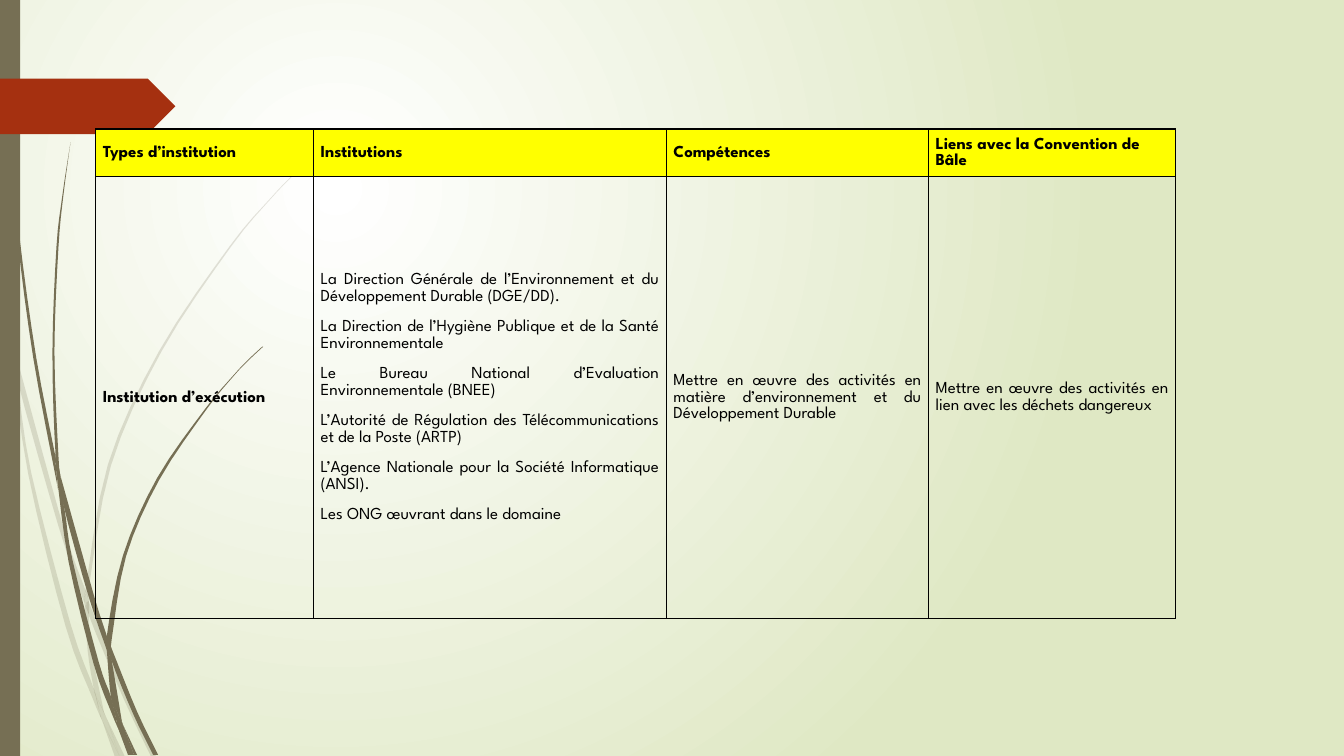
from lxml.etree import SubElement
from pptx import Presentation
from pptx.dml.color import RGBColor
from pptx.enum.shapes import MSO_SHAPE
from pptx.enum.text import MSO_ANCHOR, PP_ALIGN
from pptx.oxml import parse_xml
from pptx.oxml.ns import nsdecls, qn
from pptx.util import Inches, Pt


def color(hex_value):
    return RGBColor.from_string(hex_value)


def smooth_edge(points):
    padded = [points[0], *points, points[-1]]
    curve = [points[0]]
    for a, b, c, d in zip(padded, padded[1:], padded[2:], padded[3:]):
        for t in (0.25, 0.5, 0.75, 1):
            curve.append(tuple(
                q + t * (r - p) / 2
                + t ** 2 * (2 * p - 5 * q + 4 * r - s) / 2
                + t ** 3 * (3 * q - p - 3 * r + s) / 2
                for p, q, r, s in zip(a, b, c, d)))
    return [(Inches(x), Inches(y)) for x, y in curve]


presentation = Presentation()
presentation.slide_width = Inches(13.33)
presentation.slide_height = Inches(7.5)
slide = presentation.slides.add_slide(presentation.slide_layouts[6])

background_fill = slide.background.fill
background_fill.gradient()
for stop, stop_color in zip(background_fill.gradient_stops, ("FFFFFF", "DFE8C4")):
    stop.color.rgb = color(stop_color)
linear = next(slide.element.iter(qn("a:lin")))
linear.getparent().replace(linear, parse_xml(
    f'<a:path {nsdecls("a")} path="circle">'
    '<a:fillToRect l="50000" t="50000" r="100000" b="100000"/></a:path>'))

pale_blades = [
    ([(0.11, 3.5), (0.09, 3.22), (0, 2.82)], [(0, 2.99), (0.1, 3.44), (0.11, 3.5)]),
    ([(0.14, 3.45), (0.17, 3.76), (0.58, 5.22), (0.84, 5.99)],
     [(0.85, 5.86), (0.62, 5.2), (0.14, 3.45)]),
    ([(0.88, 5.96), (0.88, 6.1), (1.23, 6.94), (1.5, 7.51)],
     [(1.55, 7.51), (1.27, 6.92), (0.92, 6.07), (0.88, 5.96)]),
    ([(1.05, 7.11), (1.19, 7.51)], [(1.24, 7.51), (1.05, 7.11)]),
    ([(0.11, 3.5), (0.28, 4.7), (0.65, 6.21), (0.92, 6.93), (1.01, 7.14)],
     [(0.99, 7.07), (0.93, 6.83), (0.7, 6.19), (0.31, 4.69), (0.17, 3.76), (0.11, 3.5)]),
    ([(0.84, 5.99), (0.87, 6.46), (0.93, 6.83), (0.96, 6.92), (1.05, 7.11)],
     [(1.03, 7.06), (0.91, 6.46), (0.88, 6.1), (0.88, 6.08), (0.84, 5.99)]),
    ([(3.12, 1.53), (2.89, 1.75), (2.68, 1.97), (2.28, 2.44), (1.58, 3.48),
      (1.07, 4.61), (0.85, 5.84), (0.85, 5.86), (0.88, 5.96)],
     [(0.88, 5.84), (1.1, 4.62), (1.6, 3.49), (2.29, 2.45), (2.68, 1.98),
      (2.9, 1.75), (3.12, 1.54)]),
    ([(1.01, 7.14), (1.14, 7.51)], [(1.19, 7.51), (1.01, 7.14)]),
    ([(0.85, 5.86), (0.84, 5.99), (0.88, 6.08)], [(0.88, 6.1), (0.88, 5.96), (0.85, 5.86)]),
    ([(0.93, 6.83), (0.99, 7.07), (1.01, 7.14), (1.19, 7.51)],
     [(1.19, 7.51), (1.05, 7.11), (0.96, 6.92), (0.93, 6.83)]),
]
dark_blades = [
    ([(0.03, 0), (0.04, 0.48), (0.07, 1.1), (0.17, 2.33), (0.33, 3.55), (0.56, 4.77),
      (0.57, 4.81)],
     [(0.55, 4.57), (0.55, 4.53), (0.36, 3.55), (0.19, 2.32), (0.08, 1.09),
      (0.05, 0.48), (0.04, 0)]),
    ([(0.6, 4.72), (0.64, 5.05), (0.88, 5.92), (1.06, 6.45)],
     [(1.06, 6.33), (1.06, 6.31), (0.93, 5.9), (0.6, 4.72)]),
    ([(1.1, 6.41), (1.11, 6.56), (1.32, 7.08), (1.52, 7.49)],
     [(1.57, 7.49), (1.36, 7.06), (1.13, 6.49), (1.1, 6.41)]),
    ([(0.57, 4.77), (0.68, 5.57), (0.93, 6.59), (1.11, 7.08), (1.17, 7.22)],
     [(1.16, 7.17), (1.1, 6.91), (0.98, 6.57), (0.72, 5.56), (0.64, 5.05), (0.57, 4.77)]),
    ([(0.7, 1.41), (0.62, 1.93), (0.56, 2.45), (0.52, 3.49), (0.55, 4.49), (0.6, 4.72)],
     [(0.6, 4.72), (0.58, 4.53), (0.54, 3.49), (0.58, 2.45), (0.63, 1.93), (0.7, 1.41)]),
    ([(1.22, 7.19), (1.33, 7.49)], [(1.36, 7.49), (1.22, 7.19)]),
    ([(0.55, 4.49), (0.55, 4.53), (0.57, 4.77), (0.64, 5.05)],
     [(0.64, 5.05), (0.6, 4.72), (0.55, 4.49)]),
    ([(2.6, 3.44), (2.45, 3.58), (2.31, 3.73), (2.04, 4.05), (1.56, 4.74),
      (1.22, 5.51), (1.06, 6.31), (1.1, 6.41)],
     [(1.11, 6.33), (1.25, 5.52), (1.58, 4.76), (2.05, 4.06), (2.31, 3.74),
      (2.45, 3.59), (2.61, 3.44)]),
    ([(1.17, 7.22), (1.27, 7.49)], [(1.31, 7.49), (1.17, 7.22)]),
    ([(1.06, 6.45), (1.1, 6.91), (1.16, 7.06), (1.22, 7.19)],
     [(1.21, 7.16), (1.11, 6.56), (1.09, 6.51), (1.06, 6.45)]),
    ([(1.06, 6.31), (1.06, 6.45), (1.09, 6.51), (1.11, 6.56)],
     [(1.11, 6.56), (1.1, 6.41), (1.06, 6.31)]),
    ([(1.1, 6.91), (1.16, 7.17), (1.17, 7.22), (1.3, 7.49)],
     [(1.33, 7.49), (1.22, 7.19), (1.16, 7.06), (1.1, 6.91)]),
]
for blades, opacity in ((pale_blades, 20), (dark_blades, 100)):
    for left_edge, right_edge in blades:
        outline = smooth_edge(left_edge) + smooth_edge(right_edge)
        builder = slide.shapes.build_freeform(*outline[0], scale=1.0)
        builder.add_line_segments(outline[1:], close=True)
        blade = builder.convert_to_shape()
        blade.shadow.inherit = False
        blade.fill.solid()
        blade.fill.fore_color.rgb = color("766F54")
        blade.line.fill.background()
        if opacity < 100:
            blade_color = next(blade.element.iter(qn("a:srgbClr")))
            SubElement(blade_color, qn("a:alpha")).set("val", str(opacity * 1000))

for kind, top, width, height, fill_color in (
    (MSO_SHAPE.RECTANGLE, 0, 0.2, 7.5, "766F54"),
    (MSO_SHAPE.PENTAGON, 0.78, 1.74, 0.55, "A53010"),
):
    shape = slide.shapes.add_shape(
        kind, 0, Inches(top), Inches(width), Inches(height))
    shape.shadow.inherit = False
    shape.fill.solid()
    shape.fill.fore_color.rgb = color(fill_color)
    shape.line.fill.background()

rows = [
    [["Types d’institution"], ["Institutions"], ["Compétences"],
     ["Liens avec la Convention de Bâle"]],
    [["Institution d’exécution"],
     ["La Direction Générale de l’Environnement et du Développement Durable (DGE/DD).",
      "La Direction de l’Hygiène Publique et de la Santé Environnementale",
      "Le Bureau National d’Evaluation Environnementale (BNEE)",
      "L’Autorité de Régulation des Télécommunications et de la Poste (ARTP)",
      "L’Agence Nationale pour la Société Informatique (ANSI).",
      "Les ONG œuvrant dans le domaine"],
     ["Mettre en œuvre des activités en matière d’environnement et du Développement Durable"],
     ["Mettre en œuvre des activités en lien avec les déchets dangereux"]],
]
table = slide.shapes.add_table(
    2, 4, Inches(0.95), Inches(1.28), Inches(10.71), Inches(4.86)).table
table.first_row = False
table.horz_banding = False
for column, width in zip(table.columns, (2.16, 3.5, 2.6, 2.45)):
    column.width = Inches(width)
for row, height in zip(table.rows, (0.47, 4.39)):
    row.height = Inches(height)

for row_index, row_texts in enumerate(rows):
    for column_index, texts in enumerate(row_texts):
        cell = table.cell(row_index, column_index)
        cell.vertical_anchor = MSO_ANCHOR.MIDDLE
        cell.margin_left = cell.margin_right = Inches(0.07)
        cell.margin_top = cell.margin_bottom = 0
        if row_index == 0:
            cell.fill.solid()
            cell.fill.fore_color.rgb = color("FFFF00")
        else:
            cell.fill.background()
        properties = cell._tc.get_or_add_tcPr()
        for position, side in enumerate(("lnL", "lnR", "lnT", "lnB")):
            properties.insert(position, parse_xml(
                f'<a:{side} {nsdecls("a")} w="12700"><a:solidFill>'
                f'<a:srgbClr val="000000"/></a:solidFill></a:{side}>'))
        for index, text in enumerate(texts):
            frame = cell.text_frame
            paragraph = frame.add_paragraph() if index else frame.paragraphs[0]
            paragraph.alignment = PP_ALIGN.JUSTIFY if row_index else PP_ALIGN.LEFT
            paragraph.line_spacing = 1.07
            paragraph.space_before = paragraph.space_after = Pt(5)
            run = paragraph.add_run()
            run.text = text
            run.font.name = "League Spartan"
            run.font.size = Pt(12)
            run.font.bold = row_index == 0 or column_index == 0
            run.font.color.rgb = color("000000")

presentation.save("out.pptx")
